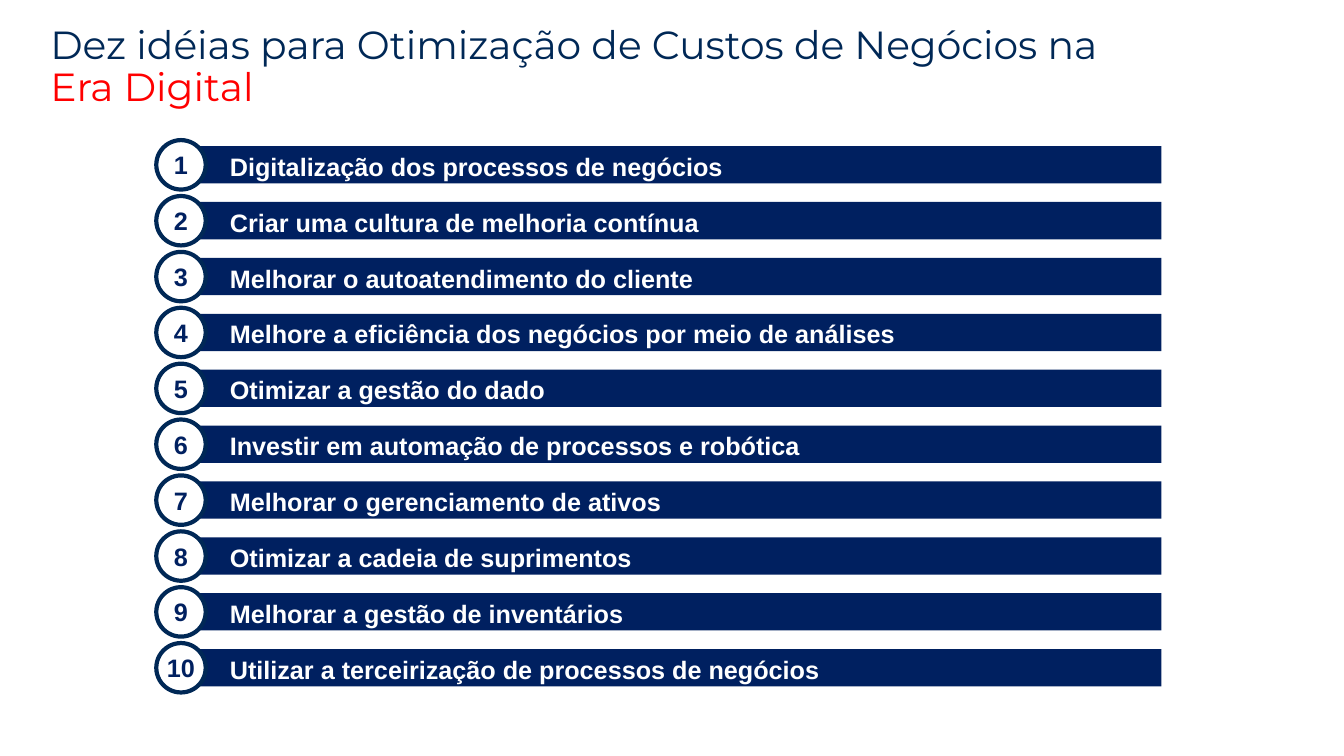
from pptx import Presentation
from pptx.dml.color import RGBColor
from pptx.enum.shapes import MSO_SHAPE as Preset
from pptx.enum.text import MSO_ANCHOR as Anchor, PP_ALIGN as Align
from pptx.util import Inches, Pt

# Content
TITLE = "Dez idéias para Otimização de Custos de Negócios na "
TITLE_ACCENT = "Era Digital"
IDEAS = [
    "Digitalização dos processos de negócios",
    "Criar uma cultura de melhoria contínua",
    "Melhorar o autoatendimento do cliente",
    "Melhore a eficiência dos negócios por meio de análises",
    "Otimizar a gestão do dado",
    "Investir em automação de processos e robótica",
    "Melhorar o gerenciamento de ativos",
    "Otimizar a cadeia de suprimentos",
    "Melhorar a gestão de inventários",
    "Utilizar a terceirização de processos de negócios",
]

THEME = {
    "title": RGBColor(0x00, 0x28, 0x56),
    "accent": RGBColor(0xFF, 0x00, 0x00),
    "bar": RGBColor(0x00, 0x20, 0x60),
    "white": RGBColor(0xFF, 0xFF, 0xFF),
    "title_font": "Montserrat",
    "body_font": "Arial",
    "title_size": Pt(28),
    "body_size": Pt(18),
    "ring_width": Pt(3),
}

# Layout in inches
BAR_LEFT, BAR_WIDTH, BAR_HEIGHT = 1.78, 9.74, 0.37
CIRCLE_LEFT, CIRCLE_SIZE = 1.55, 0.49
FIRST_TOP, LAST_TOP = 1.45, 6.44
ROW_STEP = (LAST_TOP - FIRST_TOP) / (len(IDEAS) - 1)


def set_insets(text_frame, left, top, right, bottom):
    text_frame.margin_left, text_frame.margin_top = Inches(left), Inches(top)
    text_frame.margin_right, text_frame.margin_bottom = Inches(right), Inches(bottom)


def style_run(run, font, size, color, bold=False):
    run.font.name, run.font.size, run.font.bold = font, size, bold
    run.font.color.rgb = color


def add_label(slide, preset, box, fill, text, color, align, anchor, insets):
    shape = slide.shapes.add_shape(preset, *map(Inches, box))
    shape.shadow.inherit = False
    shape.fill.solid()
    shape.fill.fore_color.rgb = fill
    shape.line.fill.background()
    text_frame = shape.text_frame
    text_frame.text = text
    text_frame.word_wrap = False
    text_frame.vertical_anchor = anchor
    set_insets(text_frame, *insets)
    paragraph = text_frame.paragraphs[0]
    paragraph.alignment = align
    style_run(paragraph.runs[0], THEME["body_font"], THEME["body_size"], color, True)
    return shape


def add_title(slide):
    box = slide.shapes.add_textbox(Inches(0.5), Inches(0.25), Inches(12.52), Inches(0.59))
    text_frame = box.text_frame
    text_frame.word_wrap = True
    set_insets(text_frame, 0, 0, 0, 0)
    paragraph = text_frame.paragraphs[0]
    paragraph.text = f"{TITLE}\v{TITLE_ACCENT}"
    paragraph.line_spacing = 0.9
    for run, color in zip(paragraph.runs, (THEME["title"], THEME["accent"])):
        style_run(run, THEME["title_font"], THEME["title_size"], color)


def main():
    presentation = Presentation()
    presentation.slide_width, presentation.slide_height = Inches(13.33), Inches(7.5)
    slide = presentation.slides.add_slide(presentation.slide_layouts[6])
    add_title(slide)

    # Numbered bars
    for index, idea in enumerate(IDEAS):
        top = FIRST_TOP + index * ROW_STEP
        circle_top = top - (CIRCLE_SIZE - BAR_HEIGHT) / 2
        add_label(slide, Preset.RECTANGLE, (BAR_LEFT, top, BAR_WIDTH, BAR_HEIGHT),
                  THEME["bar"], idea, THEME["white"], Align.LEFT, Anchor.TOP,
                  (0.5, 0.05, 0, 0.05))
        circle = add_label(slide, Preset.OVAL,
                           (CIRCLE_LEFT, circle_top, CIRCLE_SIZE, CIRCLE_SIZE),
                           THEME["white"], str(index + 1), THEME["bar"],
                           Align.CENTER, Anchor.MIDDLE, (0.05,) * 4)
        circle.line.color.rgb = THEME["title"]
        circle.line.width = THEME["ring_width"]

    presentation.save("out.pptx")


if __name__ == "__main__":
    main()
